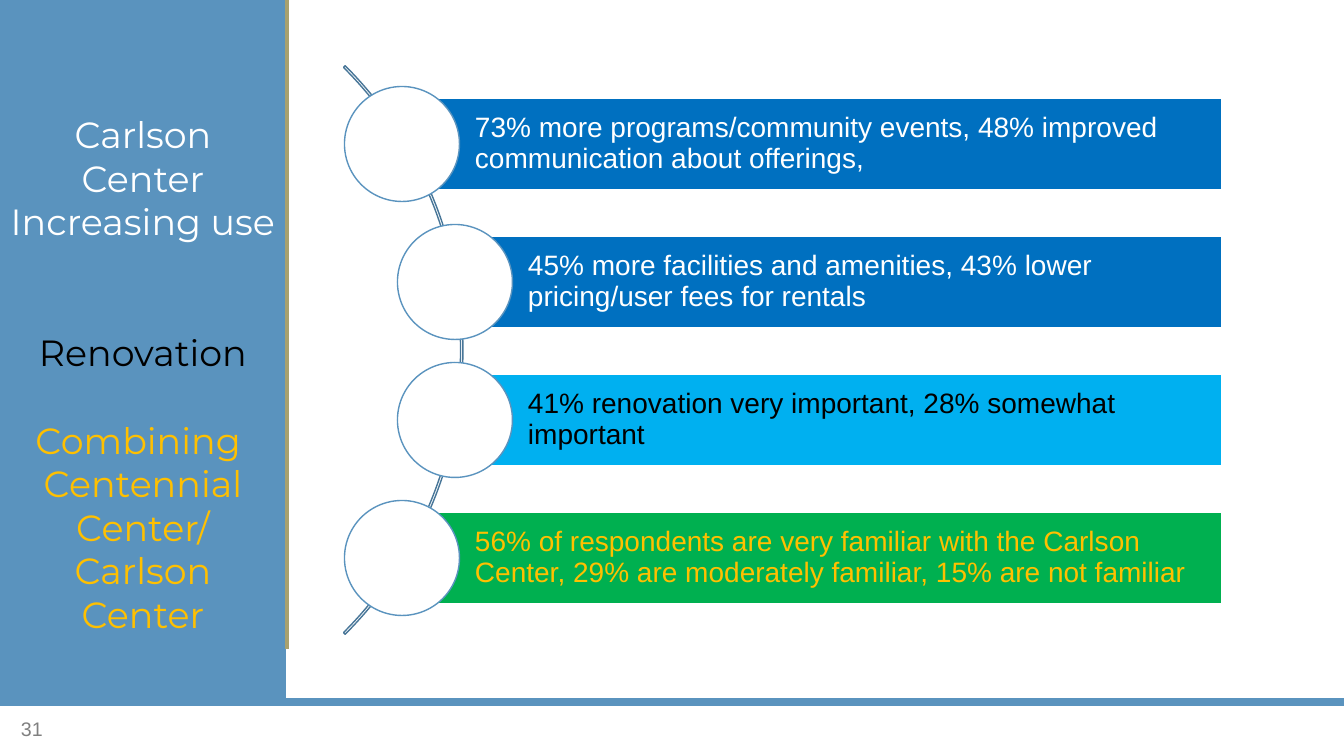
from pptx import Presentation
from pptx.dml.color import RGBColor
from pptx.enum.shapes import MSO_CONNECTOR, MSO_SHAPE
from pptx.enum.text import MSO_ANCHOR, PP_ALIGN
from pptx.oxml.ns import qn
from pptx.util import Pt
from lxml.etree import SubElement

WHITE = RGBColor(0xFF, 0xFF, 0xFF)
BLACK = RGBColor(0, 0, 0)
GOLD = RGBColor(0xFF, 0xC0, 0x00)
STEEL = RGBColor(0x5A, 0x93, 0xBE)
SLATE = RGBColor(0x48, 0x76, 0x98)
OLIVE = RGBColor(0xA8, 0xA1, 0x6E)
GRAY = RGBColor(0x80, 0x80, 0x80)
BLUE = RGBColor(0x00, 0x70, 0xC0)
SKY = RGBColor(0x00, 0xB0, 0xF0)
GREEN = RGBColor(0x00, 0xB0, 0x50)

# Panel text: words, colour, empty lines above
TITLES = [
    ("Carlson Center", WHITE, 0),
    ("Increasing use", WHITE, 0),
    ("Renovation", BLACK, 2),
    ("Combining \vCentennial Center/ Carlson Center", GOLD, 1),
]
# Bars: words, fill, text colour, centre of the circle
BARS = [
    ("73% more programs/community events, 48% improved communication about offerings,",
     BLUE, WHITE, 402),
    ("45% more facilities and amenities, 43% lower pricing/user fees for rentals",
     BLUE, WHITE, 455),
    ("41% renovation very important, 28% somewhat important", SKY, BLACK, 455),
    ("56% of respondents are very familiar with the Carlson Center, "
     "29% are moderately familiar, 15% are not familiar", GREEN, GOLD, 402),
]
PAGE = "31"

WIDE, HIGH = 1344, 756
SIDE, FLOOR = 286, 702
FIRST, STEP = 144, 138
RIGHT, THICK, DISC = 1222, 91, 115
LINE = 31.2


def px(n):
    return round(n * 914400 / 100.8)


deck = Presentation()
deck.slide_width, deck.slide_height = px(WIDE), px(HIGH)
slide = deck.slides.add_slide(deck.slide_layouts[6])
shapes = slide.shapes


def shape(kind, x, y, w, h, fill=None, edge=None):
    item = shapes.add_shape(kind, px(x), px(y), px(w), px(h))
    item.shadow.inherit = False
    if fill is None:
        item.fill.background()
    else:
        item.fill.solid()
        item.fill.fore_color.rgb = fill
    if edge is None:
        item.line.fill.background()
    else:
        item.line.color.rgb = edge
        item.line.width = Pt(1)
    return item


def rule(x1, y1, x2, y2, color, width):
    item = shapes.add_connector(MSO_CONNECTOR.STRAIGHT, px(x1), px(y1), px(x2), px(y2))
    item.line.color.rgb = color
    item.line.width = Pt(width)
    SubElement(item._element.spPr, qn("a:effectLst"))


def frame(item, anchor, left, top, right, bottom):
    box = item.text_frame
    box.word_wrap = True
    box.vertical_anchor = anchor
    box.margin_left, box.margin_top = px(left), px(top)
    box.margin_right, box.margin_bottom = px(right), px(bottom)
    return box


def write(para, text, face, size, color, align=PP_ALIGN.LEFT):
    para.text = text
    para.alignment = align
    para.font.name, para.font.size = face, Pt(size)
    para.font.color.rgb = color


# Side panel
panel = shape(MSO_SHAPE.RECTANGLE, 0, 0, SIDE, FLOOR, STEEL)
box = frame(panel, MSO_ANCHOR.TOP, 10, 112, 10, 5)
for i, (text, color, gap) in enumerate(TITLES):
    para = box.add_paragraph() if i else box.paragraphs[0]
    write(para, text, "Montserrat", 26, color, PP_ALIGN.CENTER)
    para.space_before = Pt(gap * LINE)

# Rules and page number
rule(SIDE + 1, 0, SIDE + 1, 649, OLIVE, 3)
rule(0, FLOOR, WIDE, FLOOR, STEEL, 6)
note = shapes.add_textbox(px(11), px(709), px(302), px(40))
write(frame(note, MSO_ANCHOR.MIDDLE, 10, 5, 10, 5).paragraphs[0], PAGE, "Arial", 14, GRAY)

# Arc behind the circles
arc = shape(MSO_SHAPE.BLOCK_ARC, -341, -52, 804, 804, edge=SLATE)
for i, value in enumerate((189, 27, 0.003)):
    arc.adjustments[i] = value

# Bars with their circles
for i, (text, fill, color, x) in enumerate(BARS):
    y = FIRST + i * STEP
    bar = shape(MSO_SHAPE.RECTANGLE, x, y - THICK / 2, RIGHT - x, THICK, fill, WHITE)
    para = frame(bar, MSO_ANCHOR.MIDDLE, 73, 6, 6, 6).paragraphs[0]
    write(para, text, "Arial", 20, color)
    para.line_spacing = 0.9
    shape(MSO_SHAPE.OVAL, x - DISC / 2, y - DISC / 2, DISC, DISC, WHITE, STEEL)

deck.save("out.pptx")
